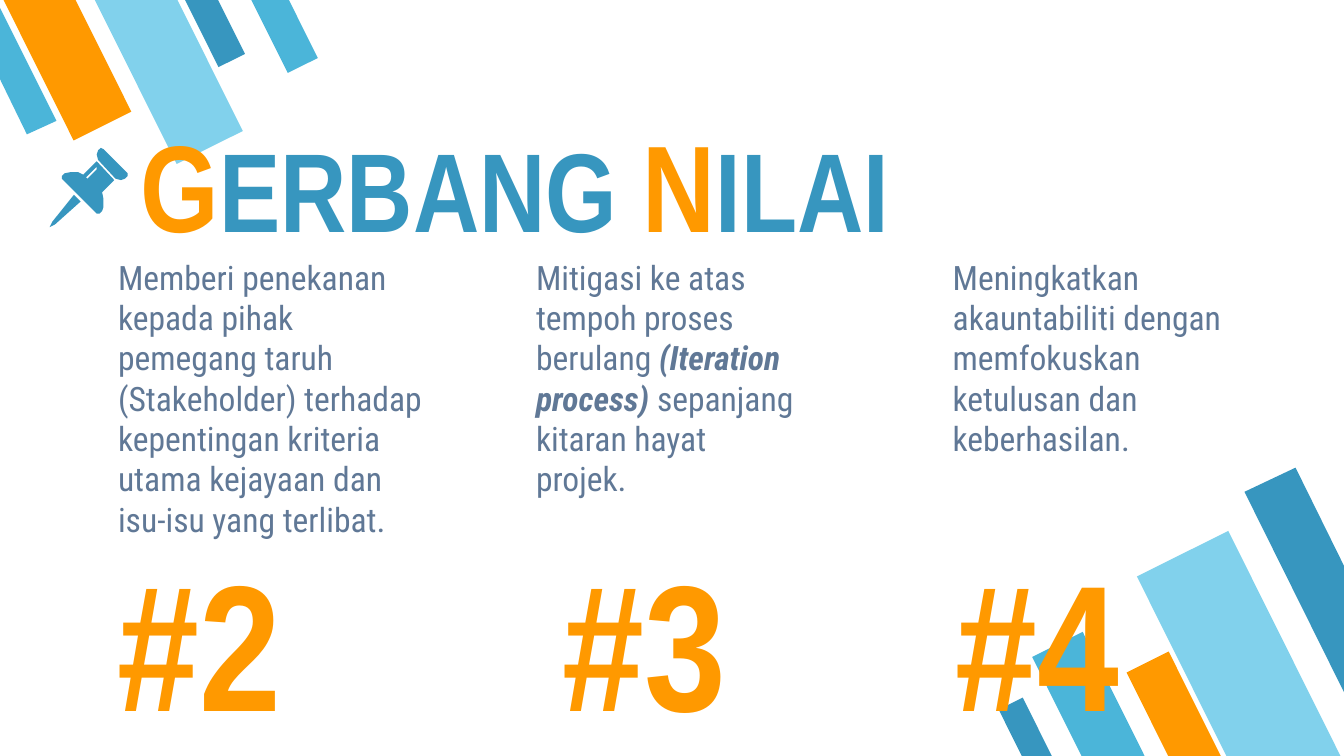
from pptx import Presentation
from pptx import util as u
from pptx.dml.color import RGBColor
from pptx.enum import shapes, text

BLUE, CYAN, SKY = "3796BF", "4BB5D9", "81D1EC"
ORANGE, SLATE = "FF9900", "607896"
BODY_FONT, DISPLAY_FONT = "Roboto Condensed", "Arial Narrow"


def color(hex_string):
    return RGBColor.from_string(hex_string)


class SlideBuilder:
    """Places elements on a grid of 100 columns, each cell 0.1 inch square."""

    def __init__(self, deck):
        self.page = deck.slides.add_slide(deck.slide_layouts[6])
        self.cell = deck.slide_width / 100

    def grid(self, *cells):
        return [u.Emu(round(value * self.cell)) for value in cells]

    def paint(self, shape, fill):
        shape.shadow.inherit = False
        shape.fill.solid()
        shape.fill.fore_color.rgb = color(fill)
        shape.line.fill.background()

    def bar(self, place, angle, fill):
        shape = self.page.shapes.add_shape(
            shapes.MSO_SHAPE.FLOWCHART_MANUAL_INPUT, *self.grid(*place))
        shape.element.spPr.get_or_add_xfrm().set("flipH", "1")
        shape.rotation = angle
        self.paint(shape, fill)

    def outline(self, contours, fill):
        # Points are given in tenths of a cell
        first, *others = contours
        builder = self.page.shapes.build_freeform(*first[0], scale=self.cell / 10)
        builder.add_line_segments(first[1:], close=True)
        for contour in others:
            builder.move_to(*contour[0])
            builder.add_line_segments(contour[1:], close=True)
        self.paint(builder.convert_to_shape(), fill)

    def words(self, place, spans, font, size=None, fill=None, bold=False,
              inset=1, wrap=True, anchor=text.MSO_ANCHOR.TOP):
        """Each span is (wording, overrides of the paragraph's font)."""
        box = self.page.shapes.add_textbox(*self.grid(*place))
        frame = box.text_frame
        frame.word_wrap = wrap
        frame.vertical_anchor = anchor
        if not wrap:
            frame.auto_size = text.MSO_AUTO_SIZE.SHAPE_TO_FIT_TEXT
        frame.margin_left, frame.margin_right = self.grid(1, 1)
        frame.margin_top, frame.margin_bottom = self.grid(inset, inset)
        para = frame.paragraphs[0]
        self.style(para.font, name=font, size=size, fill=fill, bold=bold)
        for wording, overrides in spans:
            span = para.add_run()
            span.text = wording
            self.style(span.font, **overrides)

    def style(self, font, size=None, fill=None, **settings):
        if size:
            font.size = u.Pt(size)
        if fill:
            font.color.rgb = color(fill)
        for key, value in settings.items():
            setattr(font, key, value)


def main():
    deck = Presentation()
    deck.slide_width, deck.slide_height = u.Inches(10), u.Inches(5.625)
    slide = SlideBuilder(deck)

    # Slanted bars in the lower right and upper left corners
    corners = {
        153.5: [((78.9, 47.4, 4.2, 10.4), CYAN), ((88.4, 40.2, 7.6, 18.9), SKY),
                ((85.6, 48.8, 3.5, 8.8), ORANGE), ((75.3, 52.1, 2, 4.9), BLUE)],
        333.5: [((14.9, -0.8, 2.2, 5.6), BLUE), ((2.6, -1.8, 4.8, 11.8), ORANGE),
                ((9.8, -2, 5.5, 13.7), SKY), ((19.9, -1, 2.5, 6.2), CYAN)],
    }
    for angle, bars in corners.items():
        for place, fill in bars:
            slide.bar(place, angle, fill)

    # Bars trimmed at the slide's edge
    slide.outline([[(964, 348), (926, 366), (1000, 515), (1000, 421)]], BLUE)
    slide.outline([[(20, 100), (42, 90), (0, 6), (0, 59)]], CYAN)

    # Three value columns
    columns = [
        (7.8, 25.5, [("Memberi penekanan kepada pihak pemegang taruh (Stakeholder) "
                      "terhadap kepentingan kriteria utama kejayaan dan isu-isu "
                      "yang terlibat.", {})]),
        (38.9, 21.4, [("Mitigasi ke atas tempoh proses berulang ", {}),
                      ("(Iteration process) ", {"bold": True, "italic": True}),
                      ("sepanjang kitaran hayat projek.", {})]),
        (69.9, 25.5, [("Meningkatkan akauntabiliti dengan memfokuskan ketulusan "
                       "dan keberhasilan.", {})]),
    ]
    for left, width, spans in columns:
        slide.words((left, 18.1, width, 34.1), spans, BODY_FONT, 18, SLATE)

    # Large numbers below the columns
    for number, left in enumerate((7.8, 40.9, 70.1), start=2):
        slide.words((left, 39.1, 16.4, 17.2), [(f"#{number}", {})], DISPLAY_FONT,
                    96, ORANGE, bold=True, inset=0.5, wrap=False)

    # Pushpin: needle, head, then body with its highlight
    needle = [(55, 145), (39, 165), (37, 169), (41, 167), (60, 150)]
    head = [(75, 110), (73, 112), (72, 115), (73, 119), (86, 133), (90, 134),
            (93, 133), (95, 131), (95, 129), (77, 111)]
    body = [(72, 120), (62, 130), (58, 128), (53, 128), (48, 129), (46, 131),
            (46, 133), (72, 159), (74, 159), (76, 157), (77, 154), (77, 148),
            (76, 143), (85, 134)]
    highlight = [(72, 124), (72, 126), (66, 132), (65, 133), (64, 132), (71, 125)]
    for contours in ([needle], [head], [body, highlight]):
        slide.outline(contours, BLUE)

    # Title with enlarged initials
    initial, rest = {"size": 66, "fill": ORANGE}, {"size": 60, "fill": BLUE}
    slide.words((9.5, 12.2, 84.2, 7.9),
                [("G", initial), ("ERBANG ", rest), ("N", initial), ("ILAI", rest)],
                DISPLAY_FONT, bold=True, anchor=text.MSO_ANCHOR.BOTTOM)

    deck.save("out.pptx")


if __name__ == "__main__":
    main()
